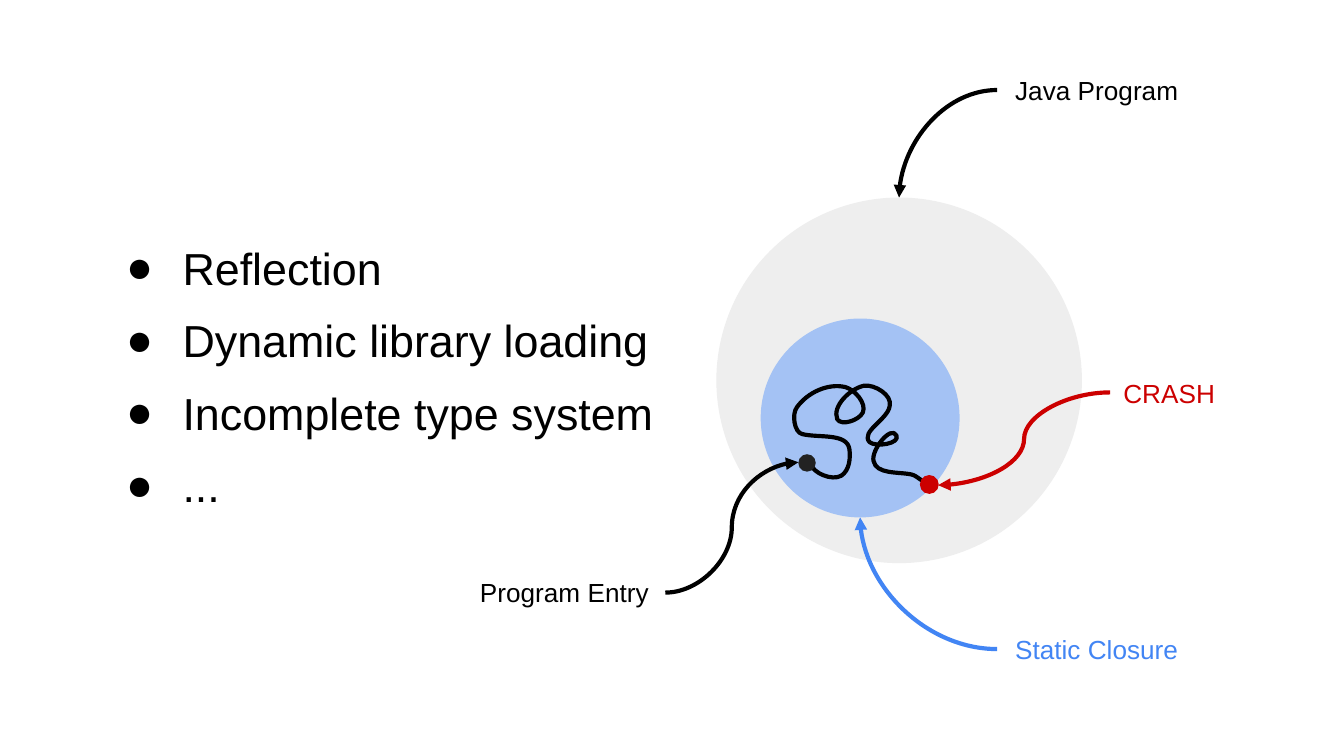
from dataclasses import dataclass

from lxml.etree import SubElement
from pptx import Presentation
from pptx.dml.color import RGBColor
from pptx.enum.shapes import MSO_CONNECTOR, MSO_SHAPE
from pptx.enum.text import MSO_AUTO_SIZE, PP_ALIGN
from pptx.oxml.ns import qn
from pptx.util import Inches, Pt


@dataclass(frozen=True)
class Theme:
    font: str = "Arial"
    ink: str = "000000"
    program: str = "EEEEEE"
    closure: str = "A4C2F4"
    closure_accent: str = "4285F4"
    crash: str = "CC0000"
    entry: str = "222222"
    list_size: int = 24
    label_size: int = 14
    stroke: float = 2.25
    outline: float = 0.75


class SlideBuilder:
    def __init__(self, slide, theme):
        self.shapes = slide.shapes
        self.theme = theme

    def circle(self, left, top, diameter, fill, outline=None):
        disc = self.shapes.add_shape(
            MSO_SHAPE.OVAL, Inches(left), Inches(top), Inches(diameter), Inches(diameter))
        disc.shadow.inherit = False
        disc.fill.solid()
        disc.fill.fore_color.rgb = RGBColor.from_string(fill)
        if outline:
            self.stroke(disc.line, outline, self.theme.outline)
        else:
            disc.line.fill.background()

    def stroke(self, line, color, width):
        line.color.rgb = RGBColor.from_string(color)
        line.width = Pt(width)

    def text_frame(self, left, top, width, height):
        frame = self.shapes.add_textbox(
            Inches(left), Inches(top), Inches(width), Inches(height)).text_frame
        frame.word_wrap = True
        frame.auto_size = MSO_AUTO_SIZE.SHAPE_TO_FIT_TEXT
        frame.margin_left = frame.margin_right = Inches(0.1)
        frame.margin_top = frame.margin_bottom = Inches(0.1)
        return frame

    def run(self, paragraph, text, size, color):
        run = paragraph.add_run()
        run.text = text
        run.font.name = self.theme.font
        run.font.size = Pt(size)
        run.font.color.rgb = RGBColor.from_string(color)

    def label(self, text, left, top, color, width=1.48, align=PP_ALIGN.CENTER):
        paragraph = self.text_frame(left, top, width, 0.44).paragraphs[0]
        paragraph.alignment = align
        self.run(paragraph, text, self.theme.label_size, color)

    def bullets(self, items, left, top, width, height):
        frame = self.text_frame(left, top, width, height)
        for index, item in enumerate(items):
            paragraph = frame.add_paragraph() if index else frame.paragraphs[0]
            paragraph.space_before = Pt(10 if index else 0)
            paragraph.space_after = Pt(10 if index == len(items) - 1 else 0)
            properties = paragraph._p.get_or_add_pPr()
            properties.set("marL", str(Inches(0.5)))
            properties.set("indent", str(Inches(-0.42)))
            bullet_color = SubElement(properties, qn("a:buClr"))
            SubElement(bullet_color, qn("a:srgbClr"), val=self.theme.ink)
            SubElement(properties, qn("a:buFont"), typeface=self.theme.font)
            SubElement(properties, qn("a:buChar"), char="●")
            self.run(paragraph, item, self.theme.list_size, self.theme.ink)

    def curved_arrow(self, start, end, color, arrow_at="tailEnd", bend="curvedConnector3"):
        arrow = self.shapes.add_connector(
            MSO_CONNECTOR.CURVE, *(Inches(value) for value in (*start, *end)))
        self.stroke(arrow.line, color, self.theme.stroke)
        properties = arrow.element.spPr
        properties.find(qn("a:prstGeom")).set("prst", bend)
        SubElement(properties.find(qn("a:ln")), qn(f"a:{arrow_at}"), type="triangle")
        SubElement(properties, qn("a:effectLst"))

    def bezier(self, start, curves, color):
        """Draw an open path; each curve is two control points and an end point."""
        points = [(Inches(x), Inches(y)) for curve in curves for x, y in curve]
        builder = self.shapes.build_freeform(Inches(start[0]), Inches(start[1]))
        builder.add_line_segments(points, close=False)
        trace = builder.convert_to_shape()
        trace.shadow.inherit = False
        trace.fill.background()
        self.stroke(trace.line, color, self.theme.stroke)
        path = trace.element.spPr.find(".//" + qn("a:path"))
        segments = path.findall(qn("a:lnTo"))
        for first in range(0, len(segments), 3):
            cubic = SubElement(path, qn("a:cubicBezTo"))
            for segment in segments[first:first + 3]:
                cubic.append(segment[0])
                path.remove(segment)


EXECUTION_START = (6.03, 3.45)
EXECUTION_CURVES = [
    ((6.05, 3.52), (6.19, 3.58), (6.26, 3.54)),
    ((6.32, 3.5), (6.33, 3.41), (6.32, 3.34)),
    ((6.3, 3.22), (6.09, 3.26), (5.97, 3.23)),
    ((5.91, 3.22), (5.89, 3.08), (5.93, 3.03)),
    ((6.01, 2.92), (6.16, 2.85), (6.29, 2.88)),
    ((6.36, 2.9), (6.45, 3), (6.42, 3.07)),
    ((6.39, 3.13), (6.26, 3.17), (6.23, 3.12)),
    ((6.19, 3.02), (6.33, 2.89), (6.43, 2.87)),
    ((6.51, 2.86), (6.64, 2.94), (6.62, 3.02)),
    ((6.61, 3.12), (6.4, 3.21), (6.47, 3.29)),
    ((6.52, 3.33), (6.7, 3.3), (6.67, 3.24)),
    ((6.63, 3.16), (6.48, 3.35), (6.5, 3.43)),
    ((6.52, 3.53), (6.68, 3.51), (6.78, 3.53)),
    ((6.83, 3.54), (6.87, 3.6), (6.92, 3.6)),
]


def main():
    presentation = Presentation()
    presentation.slide_width = Inches(10)
    presentation.slide_height = Inches(10 * 9 / 16)
    theme = Theme()
    slide = SlideBuilder(
        presentation.slides.add_slide(presentation.slide_layouts[6]), theme)

    slide.circle(5.33, 1.47, 2.72, theme.program)
    slide.label("Java Program", 7.42, 0.45, theme.ink)
    slide.curved_arrow((7.42, 0.67), (6.69, 1.47), theme.ink, bend="curvedConnector2")

    slide.circle(5.66, 2.37, 1.48, theme.closure)
    slide.label("Static Closure", 7.42, 4.61, theme.closure_accent)
    slide.curved_arrow((7.42, 4.83), (6.4, 3.85), theme.closure_accent,
                       bend="curvedConnector2")

    slide.bullets(["Reflection", "Dynamic library loading", "Incomplete type system", "..."],
                  0.76, 1.69, 4.41, 2.24)

    slide.bezier(EXECUTION_START, EXECUTION_CURVES, theme.ink)
    slide.circle(6.85, 3.54, 0.13, theme.crash, outline=theme.crash)
    slide.curved_arrow((6.98, 3.61), (8.26, 2.92), theme.crash, arrow_at="headEnd")
    slide.label("CRASH", 8.26, 2.71, theme.crash, width=0.9, align=PP_ALIGN.LEFT)

    slide.circle(5.94, 3.38, 0.13, theme.entry)
    slide.label("Program Entry", 3.46, 4.19, theme.ink)
    slide.curved_arrow((4.95, 4.41), (5.94, 3.44), theme.ink)

    presentation.save("out.pptx")


if __name__ == "__main__":
    main()
